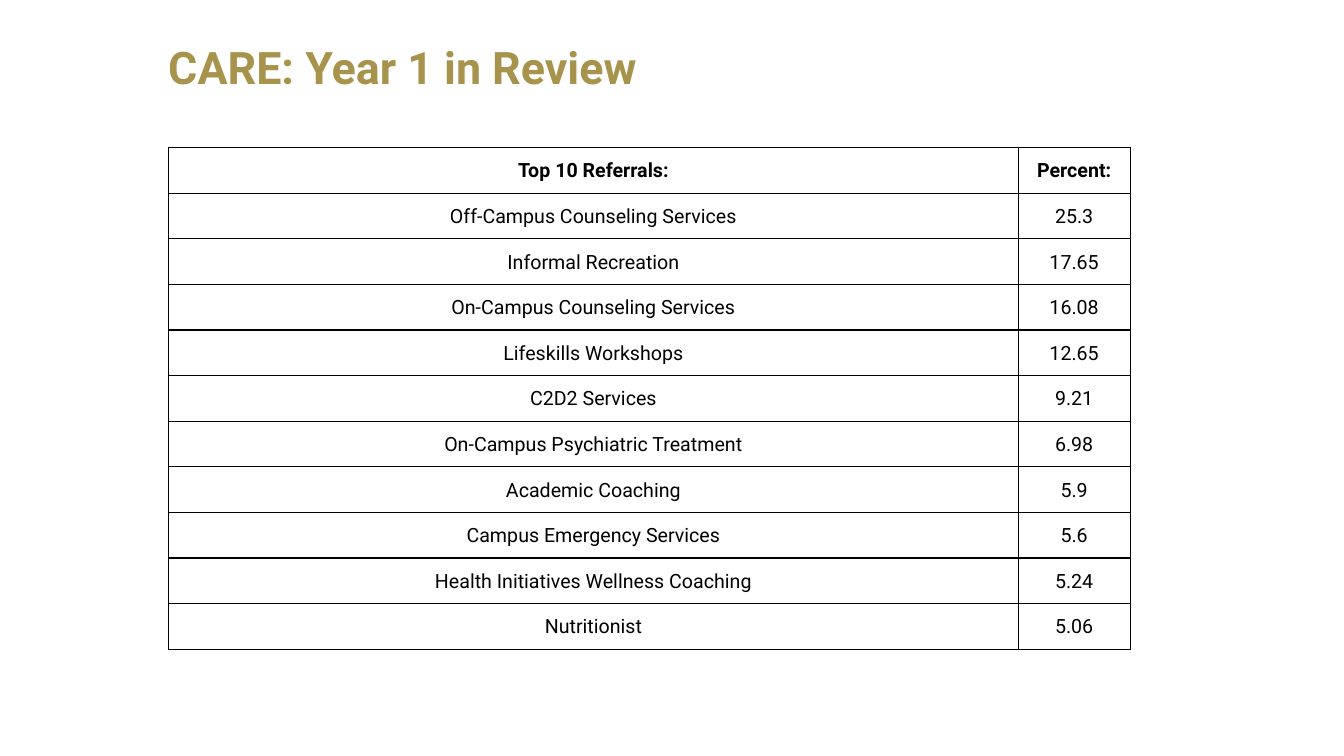
from lxml import etree
from pptx import Presentation
from pptx.dml.color import RGBColor
from pptx.enum import text
from pptx.oxml import ns
from pptx.util import Cm, Pt


def rgb(code):
    return RGBColor.from_string(code)


def add_borders(cell, code, width):
    tc_pr = cell._tc.get_or_add_tcPr()
    for i, side in enumerate(("lnL", "lnR", "lnT", "lnB")):
        ln = etree.Element(ns.qn("a:" + side), w=str(width))
        fill = etree.SubElement(ln, ns.qn("a:solidFill"))
        etree.SubElement(fill, ns.qn("a:srgbClr"), val=code)
        tc_pr.insert(i, ln)


prs = Presentation()
prs.slide_width, prs.slide_height = Cm(33.87), Cm(19.05)
s = prs.slides.add_slide(prs.slide_layouts[6])

# Title
sp = s.shapes.add_textbox(Cm(3.99), Cm(0.58), Cm(24.84), Cm(2.36))
tf = sp.text_frame
tf.word_wrap = True
tf.vertical_anchor = text.MSO_ANCHOR.MIDDLE
p = tf.paragraphs[0]
p.text = "CARE: Year 1 in Review"
p.line_spacing = 0.9
p.font.name, p.font.size, p.font.bold = "Roboto", Pt(32), True
p.font.color.rgb = rgb("A7934B")

# Referral table
referrals = [
    ("Top 10 Referrals:", "Percent:"),
    ("Off-Campus Counseling Services", "25.3"),
    ("Informal Recreation", "17.65"),
    ("On-Campus Counseling Services", "16.08"),
    ("Lifeskills Workshops", "12.65"),
    ("C2D2 Services", "9.21"),
    ("On-Campus Psychiatric Treatment", "6.98"),
    ("Academic Coaching", "5.9"),
    ("Campus Emergency Services", "5.6"),
    ("Health Initiatives Wellness Coaching", "5.24"),
    ("Nutritionist", "5.06"),
]
table = s.shapes.add_table(len(referrals), 2, Cm(4.25), Cm(3.72),
                           Cm(24.23), Cm(12.65)).table
table.horz_banding = False
table.columns[0].width, table.columns[1].width = Cm(21.41), Cm(2.82)

for i, row in enumerate(referrals):
    table.rows[i].height = Cm(1.15)
    for j, value in enumerate(row):
        cell = table.cell(i, j)
        cell.fill.background()
        add_borders(cell, "000000", Pt(1))
        cell.vertical_anchor = text.MSO_ANCHOR.MIDDLE
        cell.margin_left = cell.margin_right = Cm(0.18)
        cell.margin_top = cell.margin_bottom = 0
        p = cell.text_frame.paragraphs[0]
        p.text = value
        p.alignment = text.PP_ALIGN.CENTER
        p.line_spacing = 1.07
        p.font.name, p.font.size, p.font.bold = "Roboto", Pt(14), i == 0
        p.font.color.rgb = rgb("000000")

prs.save("out.pptx")
